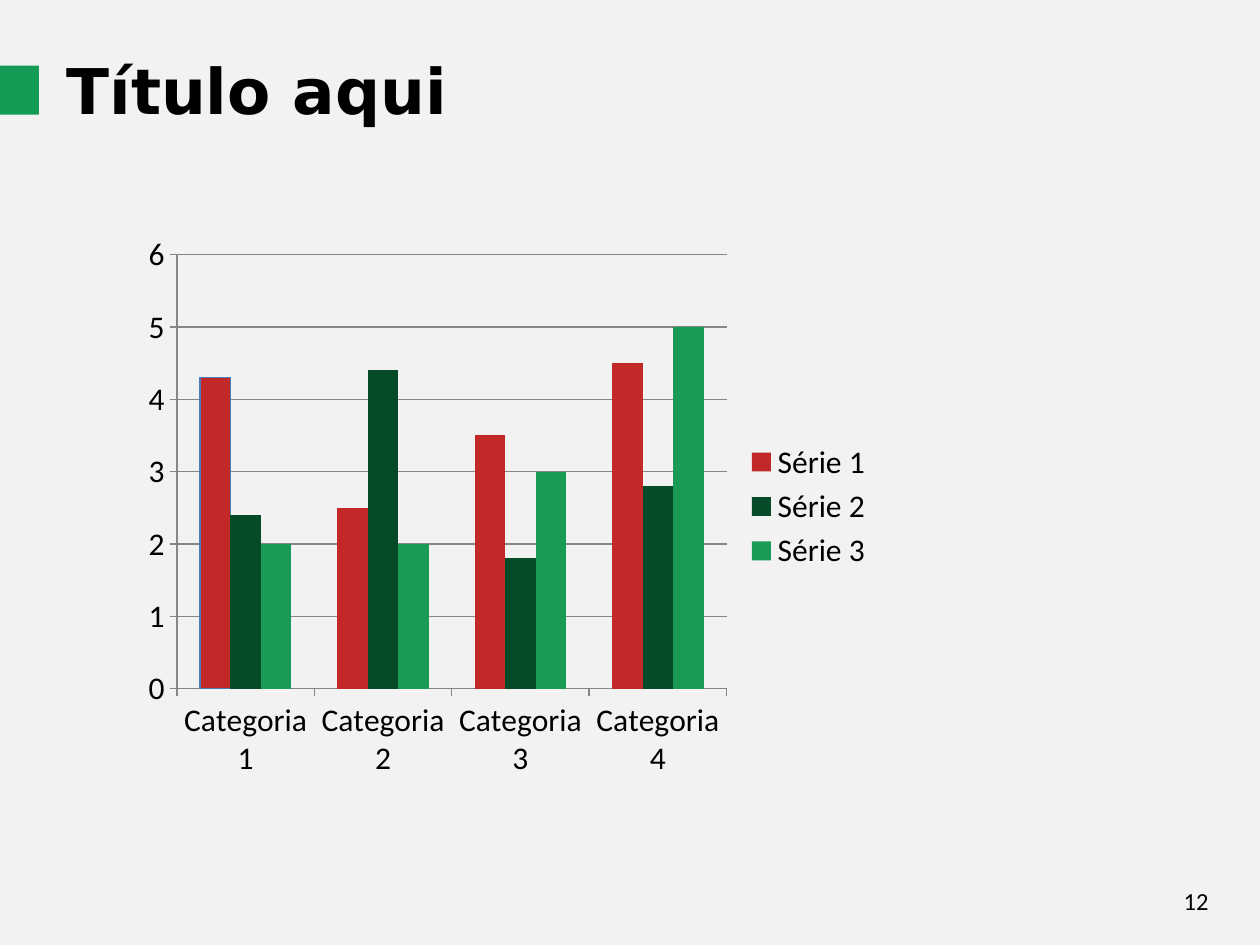
import pptx
import pptx.chart.data
import pptx.dml.color
import pptx.enum.chart
import pptx.enum.shapes
import pptx.enum.text
import pptx.util

Inches = pptx.util.Inches
Pt = pptx.util.Pt

COLORS = {
    "background": "F2F2F2",
    "text": "000000",
    "marker": "149B55",
    "axis": "868686",
    "outline": "4A7EBB",
    "Série 1": "C32828",
    "Série 2": "054B28",
    "Série 3": "199B55",
}


def rgb(name):
    return pptx.dml.color.RGBColor.from_string(COLORS[name])


class SlideBuilder:
    """Holds the style and the current slide."""

    body_font = "Calibri"
    title_font = "DejaVu Sans"

    def __init__(self, slide):
        self.slide = slide
        slide.background.fill.solid()
        slide.background.fill.fore_color.rgb = rgb("background")

    def style_font(self, font, name, size, bold=False):
        font.name = name
        font.size = Pt(size)
        font.bold = bold
        font.color.rgb = rgb("text")

    def text(self, box, words, name, size, bold=False, align=None, anchor=None):
        label = self.slide.shapes.add_textbox(*map(Inches, box))
        frame = label.text_frame
        frame.word_wrap = True
        frame.vertical_anchor = anchor
        paragraph = frame.paragraphs[0]
        paragraph.text = words
        paragraph.alignment = align
        self.style_font(paragraph.font, name, size, bold)
        return frame

    def rectangle(self, box, color):
        block = self.slide.shapes.add_shape(
            pptx.enum.shapes.MSO_SHAPE.RECTANGLE, *map(Inches, box))
        block.shadow.inherit = False
        block.fill.solid()
        block.fill.fore_color.rgb = rgb(color)
        block.line.fill.background()

    def column_chart(self, box, categories, series_values):
        data = pptx.chart.data.CategoryChartData()
        data.categories = categories
        for name, values in series_values.items():
            data.add_series(name, values)
        chart = self.slide.shapes.add_chart(
            pptx.enum.chart.XL_CHART_TYPE.COLUMN_CLUSTERED,
            *map(Inches, box), data).chart
        self.style_font(chart.font, self.body_font, 18)
        chart.has_title = False
        chart.has_legend = True
        chart.legend.position = pptx.enum.chart.XL_LEGEND_POSITION.RIGHT
        chart.legend.include_in_layout = False

        # Axes and gridlines
        chart.value_axis.has_major_gridlines = True
        for part in (chart.category_axis, chart.value_axis,
                     chart.value_axis.major_gridlines):
            part.format.line.color.rgb = rgb("axis")
            part.format.line.width = Pt(0.75)
        for axis in (chart.category_axis, chart.value_axis):
            axis.major_tick_mark = pptx.enum.chart.XL_TICK_MARK.OUTSIDE

        # Columns
        plot = chart.plots[0]
        plot.gap_width = 150
        plot.overlap = 0
        plot.vary_by_categories = False
        for series in plot.series:
            series.invert_if_negative = False
            series.format.fill.solid()
            series.format.fill.fore_color.rgb = rgb(series.name)
        return plot


def main():
    deck = pptx.Presentation()
    deck.slide_width, deck.slide_height = Inches(10), Inches(7.5)
    builder = SlideBuilder(deck.slides.add_slide(deck.slide_layouts[6]))

    # Chart, with its first column outlined
    plot = builder.column_chart(
        (1.06, 1.78, 5.97, 4.48),
        [f"Categoria {number}" for number in range(1, 5)],
        {
            "Série 1": (4.3, 2.5, 3.5, 4.5),
            "Série 2": (2.4, 4.4, 1.8, 2.8),
            "Série 3": (2, 2, 3, 5),
        })
    first_column = plot.series[0].points[0].format
    first_column.fill.solid()
    first_column.fill.fore_color.rgb = rgb("Série 1")
    first_column.line.color.rgb = rgb("outline")
    first_column.line.width = Pt(0.75)

    # Title and its marker
    title = builder.text((0.43, 0.36, 6.77, 0.71), "Título aqui",
                         builder.title_font, 36, bold=True)
    title.auto_size = pptx.enum.text.MSO_AUTO_SIZE.SHAPE_TO_FIT_TEXT
    builder.rectangle((-0.04, 0.52, 0.35, 0.39), "marker")

    # Page number
    builder.text((7.17, 6.95, 2.52, 0.4), "12", builder.body_font, 14,
                 align=pptx.enum.text.PP_ALIGN.RIGHT,
                 anchor=pptx.enum.text.MSO_ANCHOR.MIDDLE)

    deck.save("out.pptx")


if __name__ == "__main__":
    main()
